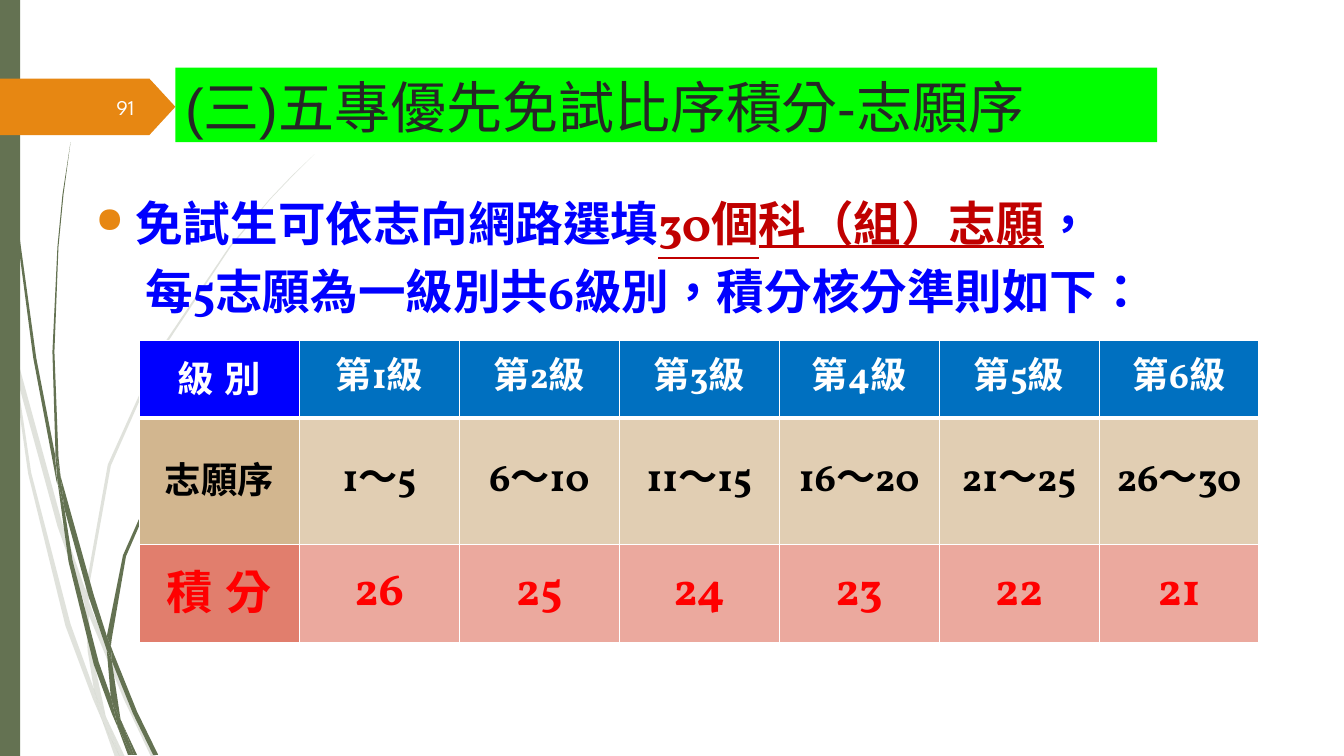
import pptx
import pptx.dml.color
import pptx.enum.shapes
import pptx.enum.text
import pptx.oxml
import pptx.oxml.ns
import pptx.util

CELL = pptx.util.Inches(0.1)
GREEN, ORANGE, BLUE, RED, WHITE = "647252", "E78712", "0000FF", "FF0000", "FFFFFF"
SANS, SERIF, NUMBER_FONT = "Arial", "Vollkorn", "League Spartan"
ALIGN = pptx.enum.text.PP_ALIGN
ANCHOR = pptx.enum.text.MSO_ANCHOR
SHAPE = pptx.enum.shapes.MSO_SHAPE

PALE_LEAVES = [
    [(1.1, 35), (0.8, 32.2), (0, 28.2), (0, 29.9), (1, 34.4)],
    [(5.7, 52.2), (8.4, 59.9), (8.5, 58.6), (6.2, 52), (1.4, 34.5), (1.7, 37.6)],
    [(9.2, 60.7), (8.8, 59.6), (8.8, 61), (12.3, 69.4), (15, 75.1), (15.5, 75.1),
     (12.7, 69.2)],
    [(11.9, 75.1), (12.4, 75.1), (10.5, 71.1)],
    [(9.3, 68.3), (7, 61.9), (3.1, 46.9), (1.7, 37.6), (1.1, 35), (2.8, 47), (6.5, 62.1),
     (9.2, 69.3), (10.1, 71.4), (9.9, 70.7)],
    [(8.4, 59.9), (8.7, 64.6), (9.3, 68.3), (9.6, 69.2), (10.5, 71.1), (10.4, 70.6),
     (9.1, 64.6), (8.8, 61), (8.8, 60.8)],
    [(8.8, 58.4), (11, 46.2), (16, 34.9), (22.9, 24.5), (26.8, 19.8), (29, 17.5),
     (31.2, 15.3), (28.9, 17.5), (26.8, 19.7), (22.8, 24.4), (15.8, 34.8), (10.7, 46.1),
     (8.5, 58.4), (8.5, 58.6), (8.8, 59.6)],
    [(10.1, 71.4), (11.4, 75.1), (11.9, 75.1)],
    [(8.8, 60.8), (8.8, 61), (8.8, 59.6), (8.5, 58.6), (8.4, 59.9)],
    [(9.6, 69.2), (9.3, 68.3), (9.9, 70.7), (10.1, 71.4), (11.9, 75.1), (10.5, 71.1)],
]
DARK_LEAVES = [
    [(0.7, 11), (1.7, 23.3), (3.3, 35.5), (5.6, 47.7), (5.7, 48.1), (5.5, 45.7),
     (5.5, 45.3), (3.6, 35.5), (1.9, 23.2), (0.8, 10.9), (0.5, 4.8), (0.3, 0), (0.3, 4.8)],
    [(8.8, 59.2), (10.6, 64.5), (10.6, 63.3), (10.6, 63.1), (9.3, 59), (6, 47.2),
     (6.4, 50.5)],
    [(11.3, 64.9), (11, 64.1), (11.1, 65.6), (13.2, 70.8), (15.2, 74.9), (15.7, 74.9),
     (13.6, 70.6)],
    [(11, 69.1), (9.8, 65.7), (7.2, 55.6), (6.4, 50.5), (5.7, 47.7), (6.8, 55.7),
     (9.3, 65.9), (11.1, 70.8), (11.7, 72.2), (11.6, 71.7)],
    [(6, 47.2), (5.8, 45.3), (5.4, 34.9), (5.8, 24.5), (6.3, 19.3), (7, 14.1), (6.2, 19.3),
     (5.7, 24.5), (5.2, 34.9), (5.5, 44.9)],
    [(13.3, 74.9), (13.6, 74.9), (12.2, 71.9)],
    [(5.7, 47.7), (6.4, 50.5), (6, 47.2), (5.5, 44.9), (5.5, 45.3)],
    [(11.1, 63.3), (12.5, 55.2), (15.8, 47.6), (20.5, 40.6), (23.1, 37.4), (24.6, 35.9),
     (26.1, 34.4), (24.5, 35.8), (23.1, 37.3), (20.4, 40.5), (15.6, 47.4), (12.2, 55.1),
     (10.6, 63.1), (11, 64.1)],
    [(11.7, 72.2), (12.7, 74.9), (13.1, 74.9)],
    [(10.6, 64.5), (11, 69.2), (11.6, 70.6), (12.2, 71.9), (12, 71.6), (11.1, 65.6),
     (10.9, 65.1)],
    [(10.6, 64.5), (10.9, 65.1), (11.1, 65.6), (11, 64.1), (10.6, 63.1), (10.6, 63.3)],
    [(11.6, 70.6), (11, 69.1), (11.6, 71.7), (11.7, 72.2), (13.1, 74.9), (13.3, 74.9),
     (12.2, 71.9)],
]


def color(code):
    return pptx.dml.color.RGBColor.from_string(code)


def cells(*values):
    return [round(value * CELL) for value in values]


def paint(shape, fill, opacity=100):
    shape.shadow.inherit = False
    shape.fill.solid()
    shape.fill.fore_color.rgb = color(fill)
    shape.line.fill.background()
    if opacity < 100:
        tone = shape._element.spPr.find(".//" + pptx.oxml.ns.qn("a:srgbClr"))
        tone.append(pptx.oxml.parse_xml(
            f'<a:alpha {pptx.oxml.ns.nsdecls("a")} val="{opacity * 1000}"/>'))


def add_leaf(page, corners, opacity):
    outline = [cells(*corner) for corner in corners]
    builder = page.shapes.build_freeform(*outline[0])
    builder.add_line_segments(outline[1:], close=True)
    paint(builder.convert_to_shape(), GREEN, opacity)


def add_block(page, kind, place, fill):
    block = page.shapes.add_shape(kind, *cells(*place))
    paint(block, fill)
    return block


def add_box(page, place):
    box = page.shapes.add_textbox(*cells(*place))
    box.text_frame.word_wrap = True
    return box.text_frame


def add_span(para, text, size, font, tone, bold=False, underline=False):
    span = para.add_run()
    span.text = text
    span.font.size = pptx.util.Pt(size)
    span.font.name = font
    span.font.bold = bold
    span.font.underline = underline
    span.font.color.rgb = color(tone)
    properties = span._r.get_or_add_rPr()
    properties.set("lang", "en-US")
    properties.set("altLang", "zh-TW")
    properties.find(pptx.oxml.ns.qn("a:latin")).addnext(pptx.oxml.parse_xml(
        f'<a:ea {pptx.oxml.ns.nsdecls("a")} typeface="{font}"/>'))
    if any(ord(letter) > 127 for letter in text):
        properties.set("lang", "zh-TW")


def indent(para, left, first=0, bullet=None):
    properties = para._p.get_or_add_pPr()
    properties.set("marL", str(cells(left)[0]))
    properties.set("indent", str(cells(first)[0]))
    para.line_spacing = 1.2
    names = pptx.oxml.ns.nsdecls("a")
    if bullet:
        for mark in (f'<a:buClr {names}><a:srgbClr val="{ORANGE}"/></a:buClr>',
                     f'<a:buSzPct {names} val="75000"/>',
                     f'<a:buChar {names} char="{bullet}"/>'):
            properties.append(pptx.oxml.parse_xml(mark))


def add_rules(page):
    frame = add_box(page, (8.5, 17.6, 121.8, 52.3))
    first = frame.paragraphs[0]
    indent(first, 3.95, -3.95, "●")
    add_span(first, "免試生可依志向網路選填", 34, SANS, BLUE, True)
    add_span(first, "30個", 34, SERIF, "C00000", True, True)
    add_span(first, "科（組）志願", 34, SANS, "C00000", True, True)
    add_span(first, "，", 34, SANS, BLUE, True)
    second = frame.add_paragraph()
    indent(second, 4.9)
    add_span(second, "每5志願為一級別共6級別，積分核分準則如下：", 34, SERIF, BLUE, True)


def set_borders(cell, top, bottom):
    properties = cell._tc.get_or_add_tcPr()
    widths = {"lnL": 1, "lnR": 1, "lnT": top, "lnB": bottom}
    for position, (side, width) in enumerate(widths.items()):
        properties.insert(position, pptx.oxml.parse_xml(
            f'<a:{side} {pptx.oxml.ns.nsdecls("a")} w="{pptx.util.Pt(width)}">'
            f'<a:solidFill><a:srgbClr val="{WHITE}"/></a:solidFill></a:{side}>'))


def fill_cell(cell, spans, size, tone, fill, top, bottom):
    cell.fill.solid()
    cell.fill.fore_color.rgb = color(fill)
    cell.vertical_anchor = ANCHOR.MIDDLE
    para = cell.text_frame.paragraphs[0]
    para.alignment = ALIGN.CENTER
    for text, font in spans:
        add_span(para, text, size, font, tone, True)
    set_borders(cell, top, bottom)


def add_score_table(page):
    levels = range(1, 7)
    lines = [
        (7.7, "級 別", [[(f"第{level}", SERIF), ("級", SANS)] for level in levels],
         26, 26, WHITE, BLUE, "0070C0", 1, 3),
        (12.5, "志願序", [[(f"{5 * level - 4}～{5 * level}", SERIF)] for level in levels],
         26, 28, "000000", "D2B68F", "E1CEB3", 3, 1),
        (9.8, "積 分", [[(str(27 - level), SERIF)] for level in levels],
         33, 33, RED, "E17E6D", "EBA99E", 1, 1),
    ]
    table = page.shapes.add_table(3, 7, *cells(13.84, 33.8, 111.09, 30)).table
    for column in table.columns:
        column.width = cells(15.87)[0]
    for row, line in enumerate(lines):
        height, name, values, name_size, size, tone, name_fill, fill, top, bottom = line
        table.rows[row].height = cells(height)[0]
        fill_cell(table.cell(row, 0), [(name, SANS)], name_size, tone, name_fill, top, bottom)
        for column, spans in enumerate(values, 1):
            fill_cell(table.cell(row, column), spans, size, tone, fill, top, bottom)


def add_title(page):
    banner = add_block(page, SHAPE.RECTANGLE, (17.4, 6.7, 97.4, 7.4), "00FF00")
    banner.text_frame.vertical_anchor = ANCHOR.TOP
    para = banner.text_frame.paragraphs[0]
    para.alignment = ALIGN.LEFT
    add_span(para, "(三)五專優先免試比序積分-志願序", 40, SANS, "262626")


def add_page_number(page):
    frame = add_box(page, (5.8, 8.6, 8.5, 4))
    frame.vertical_anchor = ANCHOR.MIDDLE
    frame.paragraphs[0].alignment = ALIGN.RIGHT
    add_span(frame.paragraphs[0], "91", 15, NUMBER_FONT, "FEFFFF")


def main():
    deck = pptx.Presentation()
    deck.slide_width, deck.slide_height = cells(133.33, 75)
    page = deck.slides.add_slide(deck.slide_layouts[6])
    for leaves, opacity in ((PALE_LEAVES, 20), (DARK_LEAVES, 100)):
        for corners in leaves:
            add_leaf(page, corners, opacity)
    add_block(page, SHAPE.RECTANGLE, (0, 0, 2, 75), GREEN)
    tag = add_block(page, SHAPE.PENTAGON, (0, 7.8, 17.4, 5.6), ORANGE)
    tag.adjustments[0] = 0.46
    add_rules(page)
    add_score_table(page)
    add_title(page)
    add_page_number(page)
    deck.save("out.pptx")


if __name__ == "__main__":
    main()
